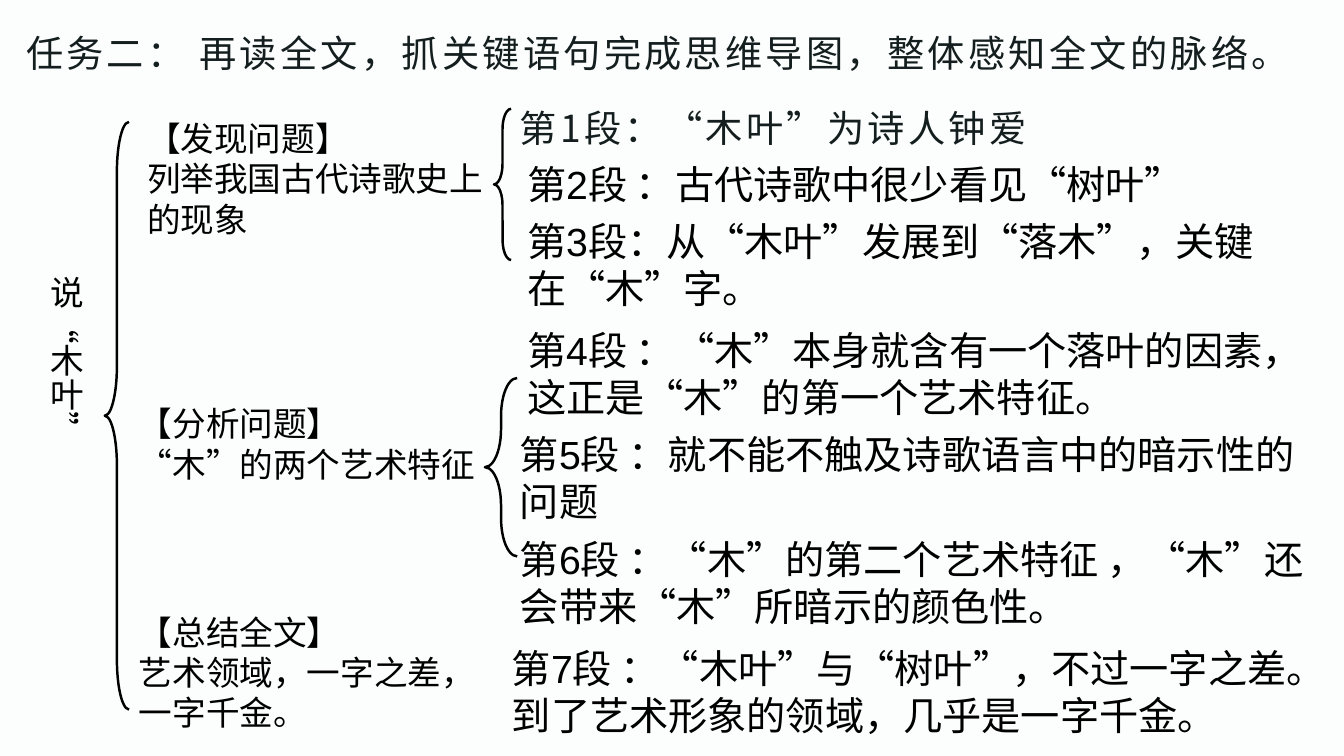
"""Mind map of the essay on 木叶: three stages, seven paragraphs, joined by braces."""
from dataclasses import dataclass

from lxml import etree
from pptx import Presentation, util as u
from pptx.dml.color import RGBColor
from pptx.enum import shapes, text
from pptx.oxml.ns import qn


@dataclass(frozen=True)
class Style:
    face: str
    size: float
    color: str
    gap: int = 0
    east: str = ""


@dataclass(frozen=True)
class Theme:
    back: str = "FCFDFD"
    ink: str = "000000"
    line: float = 1.75
    lead: Style = Style("Noto Sans CJK SC", 26.6, "141E1E", 230, "Noto Sans CJK SC")
    body: Style = Style("Arial", 28, "000000")
    stage: Style = Style("Arial", 24, "000000")


@dataclass(frozen=True)
class Box:
    """Place and size, in percent of the slide's width and height."""
    x: float
    y: float
    w: float
    h: float


@dataclass(frozen=True)
class Note:
    box: Box
    style: Style
    lines: tuple[str, ...]
    tall: bool = False


@dataclass(frozen=True)
class Brace:
    box: Box
    curl: float


THEME = Theme()
LEAD, BODY, STAGE = THEME.lead, THEME.body, THEME.stage
ONE, TWO = 7.33, 13.87
LEFT, RIGHT = 37.95, 38.48

NOTES = (
    Note(Box(1.2, 3.33, 97.5, ONE), LEAD,
         ("任务二： 再读全文，抓关键语句完成思维导图，整体感知全文的脉络。",)),
    Note(Box(LEFT, 13.33, 59.78, ONE), LEAD, ("第1段：“木叶”为诗人钟爱",)),
    Note(Box(RIGHT, 20.53, 59.78, 7.6), BODY, ("第2段 ：古代诗歌中很少看见“树叶”",)),
    Note(Box(RIGHT, 28.13, 59.78, TWO), BODY,
         ("第3段：从“木叶”发展到“落木”，关键在“木”字。",)),
    Note(Box(RIGHT, 42.53, 59.78, TWO), BODY,
         ("第4段 ：“木”本身就含有一个落叶的因素，这正是“木”的第一个艺术特征。",)),
    Note(Box(LEFT, 56.27, 60.83, TWO), BODY,
         ("第5段 ：就不能不触及诗歌语言中的暗示性的问题",)),
    Note(Box(LEFT, 70.13, 60.83, TWO), BODY,
         ("第6段 ：“木”的第二个艺术特征 ，“木”还会带来“木”所暗示的颜色性。",)),
    Note(Box(37.35, 84.53, 63.3, TWO), BODY,
         ("第7段 ：“木叶”与“树叶”，不过一字之差。到了艺术形象的领域，几乎是一字千金。",)),
    Note(Box(10.2, 14.93, 26.55, 17.47), STAGE,
         ("【发现问题】", "列举我国古代诗歌史上的现象")),
    Note(Box(9.6, 52.67, 26.55, 12.13), STAGE, ("【分析问题】", "“木”的两个艺术特征")),
    Note(Box(9.6, 80.27, 26.55, 17.47), STAGE,
         ("【总结全文】", "艺术领域，一字之差，一字千金。")),
    Note(Box(2.18, 35.2, 4.58, 25.2), STAGE, ("说“木叶”",), tall=True),
)

BRACES = (
    Brace(Box(36.75, 14.4, 1.28, 20), 1.18),
    Brace(Box(36.08, 50, 2.4, 23.6), 1.18),
    Brace(Box(7.8, 16.13, 1.8, 77.73), 2.06),
)


def place(deck, box: Box) -> tuple[int, int, int, int]:
    """Turn shares of the slide into lengths."""
    wide, high = deck.slide_width / 100, deck.slide_height / 100
    return int(box.x * wide), int(box.y * high), int(box.w * wide), int(box.h * high)


def dress(para, style: Style) -> None:
    """Set the font of a whole paragraph."""
    font = para.font
    font.name, font.size = style.face, u.Pt(style.size)
    font.color.rgb = RGBColor.from_string(style.color)
    props = para._p.pPr.find(qn("a:defRPr"))
    if style.gap:
        props.set("spc", str(style.gap))
    if style.east:
        etree.SubElement(props, qn("a:ea")).set("typeface", style.east)


def write(deck, slide, note: Note) -> None:
    """Add one text box."""
    frame = slide.shapes.add_textbox(*place(deck, note.box)).text_frame
    frame.word_wrap = True
    frame.auto_size = text.MSO_AUTO_SIZE.SHAPE_TO_FIT_TEXT
    if note.tall:
        frame._txBody.bodyPr.set("vert", "eaVert")
    frame.text = "\n".join(note.lines)
    for para in frame.paragraphs:
        dress(para, note.style)


def embrace(deck, slide, brace: Brace) -> None:
    """Add one left brace."""
    shape = slide.shapes.add_shape(shapes.MSO_SHAPE.LEFT_BRACE, *place(deck, brace.box))
    shape.shadow.inherit = False
    shape.adjustments[0] = brace.curl
    shape.fill.background()
    shape.line.color.rgb = RGBColor.from_string(THEME.ink)
    shape.line.width = u.Pt(THEME.line)


def main() -> None:
    """Build and save the slide."""
    deck = Presentation()
    deck.slide_width, deck.slide_height = u.Inches(13.33), u.Inches(7.5)
    slide = deck.slides.add_slide(deck.slide_layouts[6])
    fill = slide.background.fill
    fill.solid()
    fill.fore_color.rgb = RGBColor.from_string(THEME.back)
    for note in NOTES:
        write(deck, slide, note)
    for brace in BRACES:
        embrace(deck, slide, brace)
    deck.save("out.pptx")


if __name__ == "__main__":
    main()
